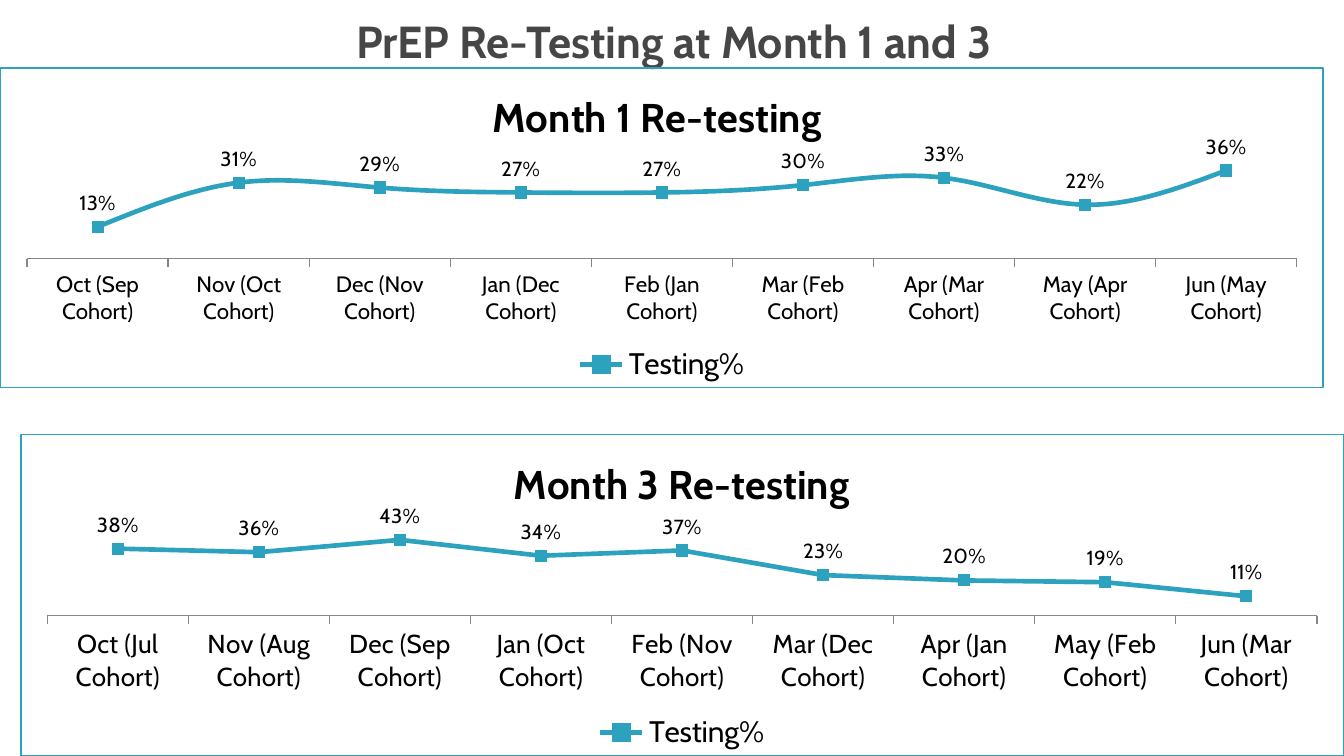
from dataclasses import dataclass

from pptx import Presentation
from pptx import util as u
from pptx.chart.data import CategoryChartData
from pptx.dml.color import RGBColor
from pptx.enum import chart as ch, text
from pptx.oxml import parse_xml
from pptx.oxml.ns import nsdecls


@dataclass(frozen=True)
class Theme:
    face: str = "Cabin"
    heading: str = "464646"
    ink: str = "000000"
    accent: str = "2DA2BF"
    axis: str = "878787"
    heading_size: float = 24
    chart_size: float = 18
    legend_size: float = 16
    label_size: float = 11


THEME = Theme()
MONTHS = ["Oct", "Nov", "Dec", "Jan", "Feb", "Mar", "Apr", "May", "Jun"]

# Each panel: cohort months and the share re-tested, in percent
PANELS = [
    dict(title="Month 1 Re-testing ", box=(0, 0.5, 9.85, 2.39),
         cohorts="Sep Oct Nov Dec Jan Feb Mar Apr May",
         percents=[13, 31, 29, 27, 27, 30, 33, 22, 36],
         top=0.4, smooth=True, axis_size=12),
    dict(title="Month 3 Re-testing", box=(0.15, 3.23, 9.85, 2.4),
         cohorts="Jul Aug Sep Oct Nov Dec Jan Feb Mar",
         percents=[38, 36, 43, 34, 37, 23, 20, 19, 11],
         top=0.5, smooth=False, axis_size=14),
]


def apply(target, values):
    for name, value in values.items():
        setattr(target, name, value)


def style_font(font, size, color=THEME.ink, bold=False):
    apply(font, dict(name=THEME.face, size=u.Pt(size), bold=bold))
    font.color.rgb = RGBColor.from_string(color)


def add_heading(slide, wording, box):
    heading = slide.shapes.add_textbox(*map(u.Inches, box))
    frame = heading.text_frame
    apply(frame, dict(
        word_wrap=True, vertical_anchor=text.MSO_ANCHOR.BOTTOM,
        margin_left=u.Inches(0.07), margin_right=u.Inches(0.07),
        margin_top=u.Inches(0.04), margin_bottom=u.Inches(0.04)))
    run = frame.paragraphs[0].add_run()
    run.text = wording
    style_font(run.font, THEME.heading_size, THEME.heading, bold=True)


def add_border(chart):
    border = parse_xml(
        f'<c:spPr {nsdecls("c", "a")}><a:noFill/><a:ln w="{u.Pt(0.75)}">'
        f'<a:solidFill><a:srgbClr val="{THEME.accent}"/></a:solidFill>'
        '</a:ln></c:spPr>')
    chart._chartSpace.chart.addnext(border)


def style_axes(chart, top, axis_size):
    months = chart.category_axis
    apply(months, dict(has_major_gridlines=False,
                       major_tick_mark=ch.XL_TICK_MARK.OUTSIDE,
                       minor_tick_mark=ch.XL_TICK_MARK.NONE))
    style_font(months.tick_labels.font, axis_size)
    months.format.line.color.rgb = RGBColor.from_string(THEME.axis)
    months.format.line.width = u.Pt(0.75)
    apply(chart.value_axis, dict(visible=False, has_major_gridlines=False,
                                 minimum_scale=0, maximum_scale=top))


def style_series(chart, smooth):
    accent = RGBColor.from_string(THEME.accent)
    plot = chart.plots[0]
    plot.vary_by_categories = False
    testing = plot.series[0]
    testing.smooth = smooth
    testing.format.line.color.rgb = accent
    testing.format.line.width = u.Pt(2.5)
    apply(testing.marker, dict(style=ch.XL_MARKER_STYLE.SQUARE, size=6))
    testing.marker.format.fill.solid()
    testing.marker.format.fill.fore_color.rgb = accent
    testing.marker.format.line.color.rgb = accent
    labels = testing.data_labels
    apply(labels, dict(show_value=True, number_format="0%",
                       number_format_is_linked=False,
                       position=ch.XL_LABEL_POSITION.ABOVE))
    style_font(labels.font, THEME.label_size)


def add_panel(slide, title, box, cohorts, percents, top, smooth, axis_size):
    data = CategoryChartData(number_format="0%")
    data.categories = [f"{month} ({cohort} Cohort)"
                       for month, cohort in zip(MONTHS, cohorts.split())]
    data.add_series("Testing%", [percent / 100 for percent in percents])
    chart = slide.shapes.add_chart(
        ch.XL_CHART_TYPE.LINE_MARKERS, *map(u.Inches, box), data).chart
    style_font(chart.font, THEME.chart_size, bold=None)
    add_border(chart)

    # The title takes its size and weight from the chart font
    chart.has_title = True
    chart.chart_title.text_frame.paragraphs[0].add_run().text = title
    chart.has_legend = True
    apply(chart.legend, dict(position=ch.XL_LEGEND_POSITION.BOTTOM,
                             include_in_layout=False))
    style_font(chart.legend.font, THEME.legend_size)

    style_axes(chart, top, axis_size)
    style_series(chart, smooth)


def main():
    deck = Presentation()
    width = u.Inches(10)
    apply(deck, dict(slide_width=width, slide_height=width * 9 // 16))
    slide = deck.slides.add_slide(deck.slide_layouts[6])
    add_heading(slide, "PrEP Re-Testing at Month 1 and 3",
                (2.58, 0.03, 7.98, 0.51))
    for panel in PANELS:
        add_panel(slide, **panel)
    deck.save("out.pptx")


if __name__ == "__main__":
    main()
